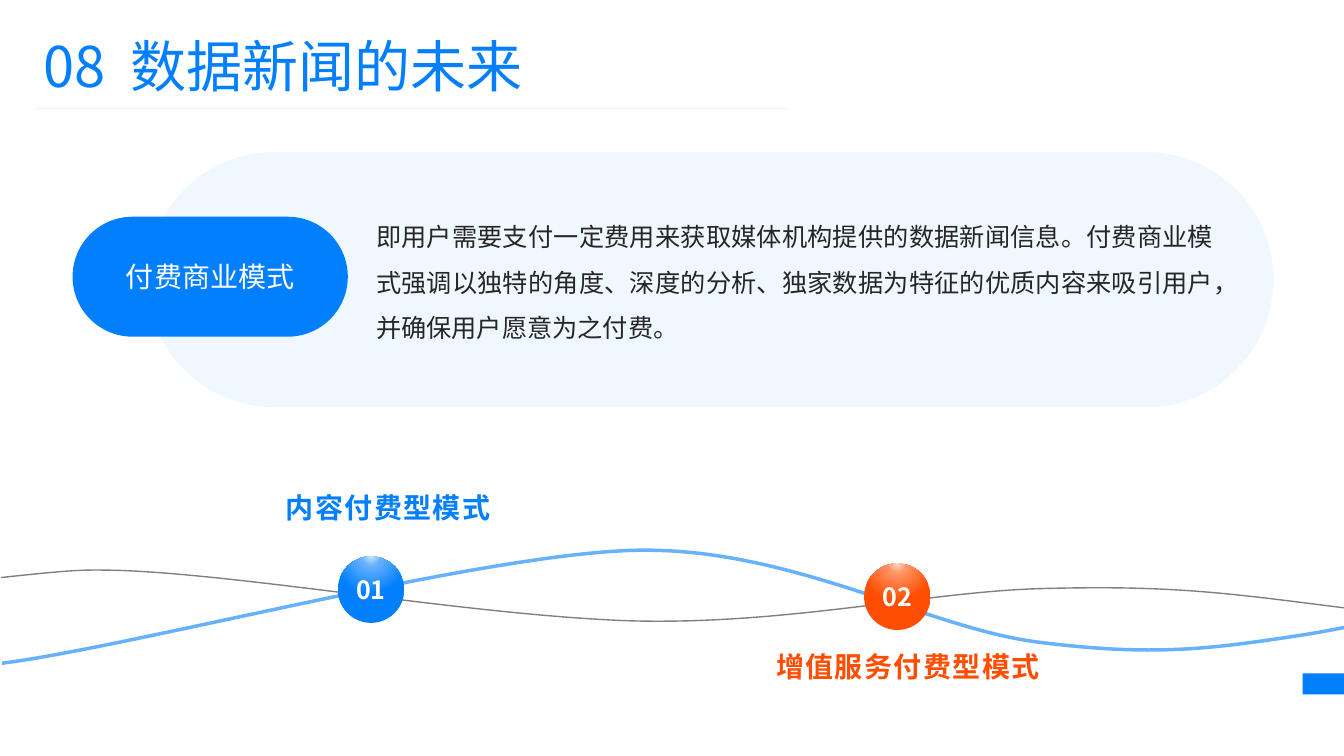
from dataclasses import dataclass

from lxml import etree
from pptx import Presentation
from pptx.dml.color import RGBColor
from pptx.enum.shapes import MSO_CONNECTOR, MSO_SHAPE
from pptx.enum.text import MSO_ANCHOR, MSO_AUTO_SIZE, PP_ALIGN
from pptx.oxml.ns import qn
from pptx.util import Pt

PX = 9144  # 100 px to the inch
FONT = "Noto Sans CJK SC"
RECT, PILL, OVAL = MSO_SHAPE.RECTANGLE, MSO_SHAPE.ROUNDED_RECTANGLE, MSO_SHAPE.OVAL
LEFT, MID, FULL = PP_ALIGN.LEFT, PP_ALIGN.CENTER, PP_ALIGN.JUSTIFY
HEX = {
    "blue": "027FFD", "sky": "67B2FE", "pale": "CCE5FF",
    "red": "FF4E01", "peach": "FF9567", "blush": "FFDCCC",
    "gray": "808080", "rule": "F2F2F2", "ink": "262626", "white": "FFFFFF",
}


@dataclass
class Run:
    text: str
    size: float
    color: str
    bold: bool = False
    gap: int = 0  # letter spacing, hundredths of a point


@dataclass
class Wave:
    color: str
    width: float
    points: list[tuple[int, int]]  # start, then three points per curve


@dataclass
class Stop:
    num: str
    name: str
    ball: tuple[int, int]
    label: tuple[int, int, int, int]
    tones: tuple[str, str, str]  # light to full


WAVES = [
    Wave("gray", 1, [
        (1, 573), (76, 565), (82, 565), (121, 566), (250, 571), (472, 611), (627, 616),
        (781, 620), (921, 587), (1032, 584), (1143, 581), (1199, 586), (1293, 598),
        (1388, 610), (1502, 623), (1608, 645)]),
    Wave("sky", 2.5, [
        (2, 658), (130, 642), (475, 550), (629, 546), (783, 542), (919, 623), (1029, 637),
        (1140, 651), (1195, 645), (1292, 630), (1388, 615), (1496, 581), (1605, 547)]),
]
STOPS = [
    Stop("02", "增值服务付费型模式", (857, 559), (731, 636, 339, 51), ("blush", "peach", "red")),
    Stop("01", "内容付费型模式", (335, 552), (161, 478, 448, 51), ("pale", "sky", "blue")),
]


def rgb(name: str) -> RGBColor:
    return RGBColor.from_string(HEX[name])


def add_form(slide, kind, box: tuple[int, int, int, int], fill: str = ""):
    form = slide.shapes.add_shape(kind, *(n * PX for n in box))
    form.shadow.inherit = False
    form.line.fill.background()
    if kind == PILL:
        form.adjustments[0] = 0.5
    if fill:
        form.fill.solid()
        form.fill.fore_color.rgb = rgb(fill)
    else:
        form.fill.background()
    return form


def write(form, runs: list[Run], align=MID, wrap: bool = True, flush: bool = True):
    frame = form.text_frame
    frame.word_wrap = wrap
    if flush:
        frame.vertical_anchor = MSO_ANCHOR.MIDDLE
        frame.margin_left = frame.margin_right = 0
        frame.margin_top = frame.margin_bottom = 0
    para = frame.paragraphs[0]
    para.alignment = align
    for item in runs:
        run = para.add_run()
        run.text = item.text
        run.font.size = Pt(item.size)
        run.font.bold = item.bold
        run.font.name = FONT
        run.font.color.rgb = rgb(item.color)
        props = run.font._element
        etree.SubElement(props, qn("a:ea"), typeface=FONT)
        if item.gap:
            props.set("spc", str(item.gap))
    return para


def add_text(slide, box: tuple[int, int, int, int]):
    return slide.shapes.add_textbox(*(n * PX for n in box))


def add_wave(slide, wave: Wave) -> None:
    first, *rest = wave.points
    pen = slide.shapes.build_freeform(*first, scale=PX)
    pen.add_line_segments(rest, close=False)
    form = pen.convert_to_shape()
    form.shadow.inherit = False
    form.fill.background()
    form.line.color.rgb = rgb(wave.color)
    form.line.width = Pt(wave.width)
    # Turn each three straight steps into one Bezier curve
    steps = list(form._element.spPr.iter(qn("a:lnTo")))
    trace = steps[0].getparent()
    for i in range(0, len(steps), 3):
        curve = etree.SubElement(trace, qn("a:cubicBezTo"))
        for step in steps[i:i + 3]:
            curve.append(step[0])
            trace.remove(step)


def add_glow(form, tones: tuple[str, str, str]) -> None:
    props = form._element.spPr
    old = props.find(qn("a:noFill"))
    grad = etree.Element(qn("a:gradFill"), rotWithShape="1")
    stops = etree.SubElement(grad, qn("a:gsLst"))
    for place, tone in zip((0, 21, 80), tones):
        stop = etree.SubElement(stops, qn("a:gs"), pos=str(place * 1000))
        etree.SubElement(stop, qn("a:srgbClr"), val=HEX[tone])
    ring = etree.SubElement(grad, qn("a:path"), path="circle")
    etree.SubElement(ring, qn("a:fillToRect"), l="50000", t="-80000", r="50000", b="180000")
    props.replace(old, grad)


def add_stop(slide, stop: Stop) -> None:
    label = add_form(slide, PILL, stop.label)
    write(label, [Run(stop.name, 20, stop.tones[-1], True, 100)])
    ball = add_form(slide, OVAL, (*stop.ball, 66, 66))
    add_glow(ball, stop.tones)
    write(ball, [Run(stop.num, 17.9, "white", True)], wrap=False)


def main() -> None:
    deck = Presentation()
    deck.slide_width, deck.slide_height = 1333 * PX, 750 * PX
    slide = deck.slides.add_slide(deck.slide_layouts[6])

    # Corner mark and model panel
    add_form(slide, RECT, (1292, 668, 41, 21), "blue")
    panel = add_form(slide, PILL, (146, 151, 1117, 253), "pale")
    tint = panel._element.spPr.find(qn("a:solidFill"))[0]
    etree.SubElement(tint, qn("a:alpha"), val="30000")
    model = add_form(slide, PILL, (72, 215, 273, 119), "blue")
    write(model, [Run("付费商业模式", 20, "white")])
    body = write(add_text(slide, (373, 202, 831, 141)), [Run(
        "即用户需要支付一定费用来获取媒体机构提供的数据新闻信息。付费商业模式强调以独特的角度、"
        "深度的分析、独家数据为特征的优质内容来吸引用户，并确保用户愿意为之付费。",
        18, "ink")], FULL)
    body.line_spacing = 1.5

    # Title and rule
    title = add_text(slide, (33, 26, 768, 77))
    write(title, [Run("08", 40, "blue"), Run(" ", 40, "blue", gap=900),
                  Run("数据新闻的未来", 40, "blue")], LEFT, flush=False)
    title.text_frame.auto_size = MSO_AUTO_SIZE.SHAPE_TO_FIT_TEXT
    rule = slide.shapes.add_connector(
        MSO_CONNECTOR.STRAIGHT, 35 * PX, 108 * PX, 783 * PX, 108 * PX)
    rule.line.color.rgb = rgb("rule")
    rule.line.width = Pt(0.5)
    etree.SubElement(rule._element.spPr, qn("a:effectLst"))

    # Waves and the two stops on them
    for wave in WAVES:
        add_wave(slide, wave)
    for stop in STOPS:
        add_stop(slide, stop)

    deck.save("out.pptx")


if __name__ == "__main__":
    main()
